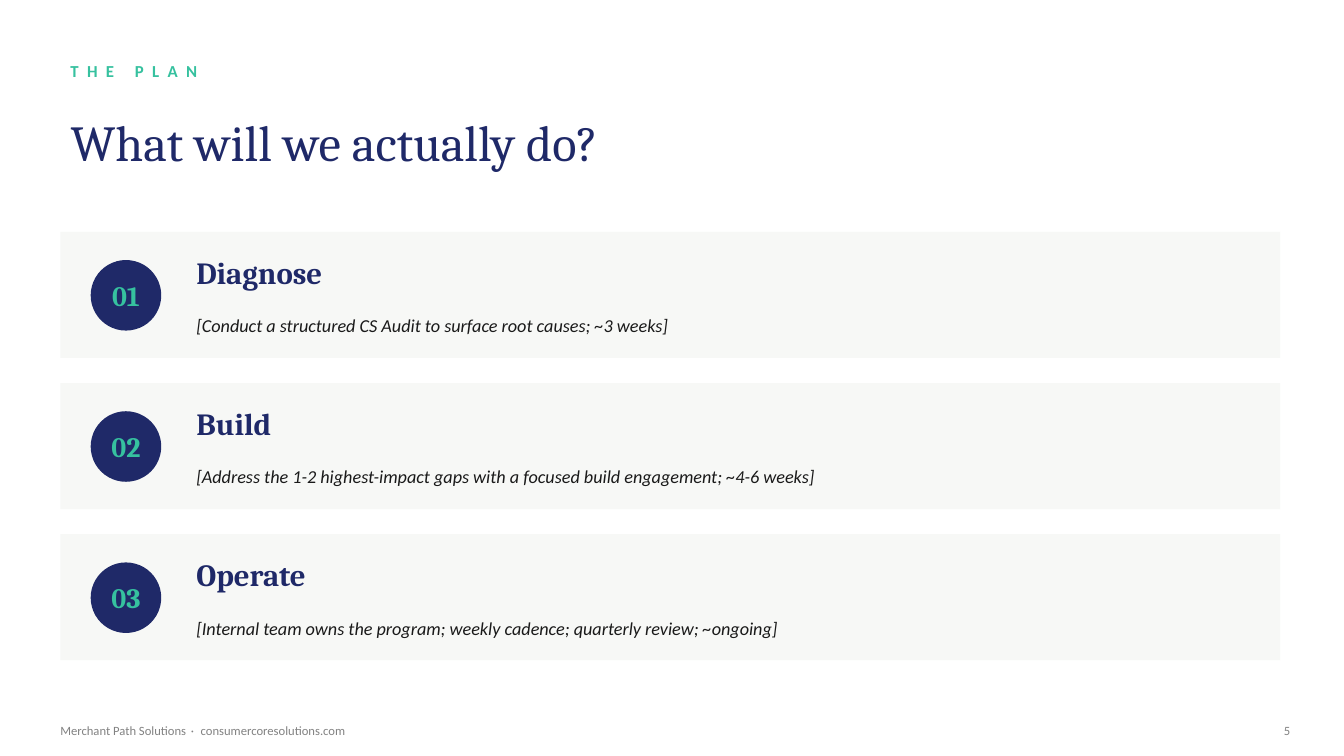
"""Build the three-step plan slide."""
from pptx import Presentation
from pptx.dml.color import RGBColor
from pptx.enum.shapes import MSO_SHAPE
from pptx.enum.text import MSO_ANCHOR, MSO_AUTO_SIZE, PP_ALIGN
from pptx.util import Pt

RECTANGLE, OVAL = MSO_SHAPE.RECTANGLE, MSO_SHAPE.OVAL
MIDDLE, NO_FIT = MSO_ANCHOR.MIDDLE, MSO_AUTO_SIZE.NONE
LEFT, CENTER, RIGHT = PP_ALIGN.LEFT, PP_ALIGN.CENTER, PP_ALIGN.RIGHT

KICKER = "THE PLAN"
TITLE = "What will we actually do?"
STEPS = [
    ("Diagnose", "[Conduct a structured CS Audit to surface root causes; ~3 weeks]"),
    ("Build", "[Address the 1-2 highest-impact gaps with a focused build engagement; ~4-6 weeks]"),
    ("Operate", "[Internal team owns the program; weekly cadence; quarterly review; ~ongoing]"),
]
FOOTER = [("Merchant Path Solutions", 0), (" · ", 1.35), ("consumercoresolutions.com", 0)]
PAGE_NUMBER = "5"

COLORS = {"navy": "1F2968", "green": "36C19F", "card": "F7F8F6",
          "ink": "1A1A1A", "gray": "828282"}
HEADING_FONT, BODY_FONT = "Cambria", "Calibri"

MARGIN = 43.2
CARD_TOP, CARD_WIDTH, CARD_HEIGHT, CARD_STEP = 165.6, 871.2, 90, 108
BADGE_LEFT, BADGE_OFFSET, BADGE_SIZE = 64.8, 20.16, 50.4
TEXT_LEFT = 133.2
FOOTER_TOP, FOOTER_HEIGHT = 511.2, 21.6


def color(name):
    return RGBColor.from_string(COLORS[name])


def place(box, left, top, width, height):
    box.left, box.top, box.width, box.height = Pt(left), Pt(top), Pt(width), Pt(height)


def write(box, spans, font, size, tint, bold=False, italic=False, align=LEFT, leading=None):
    frame = box.text_frame
    frame.word_wrap = True
    frame.auto_size = NO_FIT
    frame.vertical_anchor = MIDDLE
    para = frame.paragraphs[0]
    para.alignment = align
    if leading:
        para.line_spacing = Pt(leading)
    for text, spacing in spans:
        span = para.add_run()
        span.text = text
        span.font.name, span.font.size = font, Pt(size)
        span.font.bold, span.font.italic = bold, italic
        span.font.color.rgb = color(tint)
        if spacing:
            span.font._element.set("spc", str(round(spacing * 100)))


def add_text(page, area, spans, font, size, tint, **style):
    box = page.shapes.add_textbox(*map(Pt, area))
    write(box, spans, font, size, tint, **style)


def add_block(page, kind, area, tint):
    block = page.shapes.add_shape(kind, *map(Pt, area))
    block.shadow.inherit = False
    block.fill.solid()
    block.fill.fore_color.rgb = color(tint)
    block.line.fill.background()
    return block


def add_step(page, index, name, detail):
    top = CARD_TOP + index * CARD_STEP
    add_block(page, RECTANGLE, (MARGIN, top, CARD_WIDTH, CARD_HEIGHT), "card")
    badge = add_block(page, OVAL, (BADGE_LEFT, top + BADGE_OFFSET, BADGE_SIZE, BADGE_SIZE), "navy")
    frame = badge.text_frame
    frame.margin_left = frame.margin_right = frame.margin_top = frame.margin_bottom = 0
    write(badge, [(f"{index + 1:02d}", 0)], HEADING_FONT, 20, "green", bold=True, align=CENTER)
    add_text(page, (TEXT_LEFT, top + 10.8, 252, 36), [(name, 0)],
             HEADING_FONT, 22, "navy", bold=True)
    add_text(page, (TEXT_LEFT, top + 46.8, 756, 39.6), [(detail, 0)],
             BODY_FONT, 13, "ink", italic=True, leading=16)


def main():
    deck = Presentation()
    deck.slide_width, deck.slide_height = Pt(960), Pt(540)
    page = deck.slides.add_slide(deck.slide_layouts[5])
    title = page.shapes.title
    place(title, MARGIN, 68.4, 864, 64.8)
    write(title, [(TITLE, 0)], HEADING_FONT, 36, "navy")
    add_text(page, (MARGIN, 36, 576, 28.8), [(KICKER, 6)], BODY_FONT, 12, "green", bold=True)
    for index, (name, detail) in enumerate(STEPS):
        add_step(page, index, name, detail)
    add_text(page, (36, FOOTER_TOP, 576, FOOTER_HEIGHT), FOOTER, BODY_FONT, 9, "gray")
    add_text(page, (900, FOOTER_TOP, 28.8, FOOTER_HEIGHT), [(PAGE_NUMBER, 0)],
             BODY_FONT, 9, "gray", align=RIGHT)
    deck.save("out.pptx")


if __name__ == "__main__":
    main()
